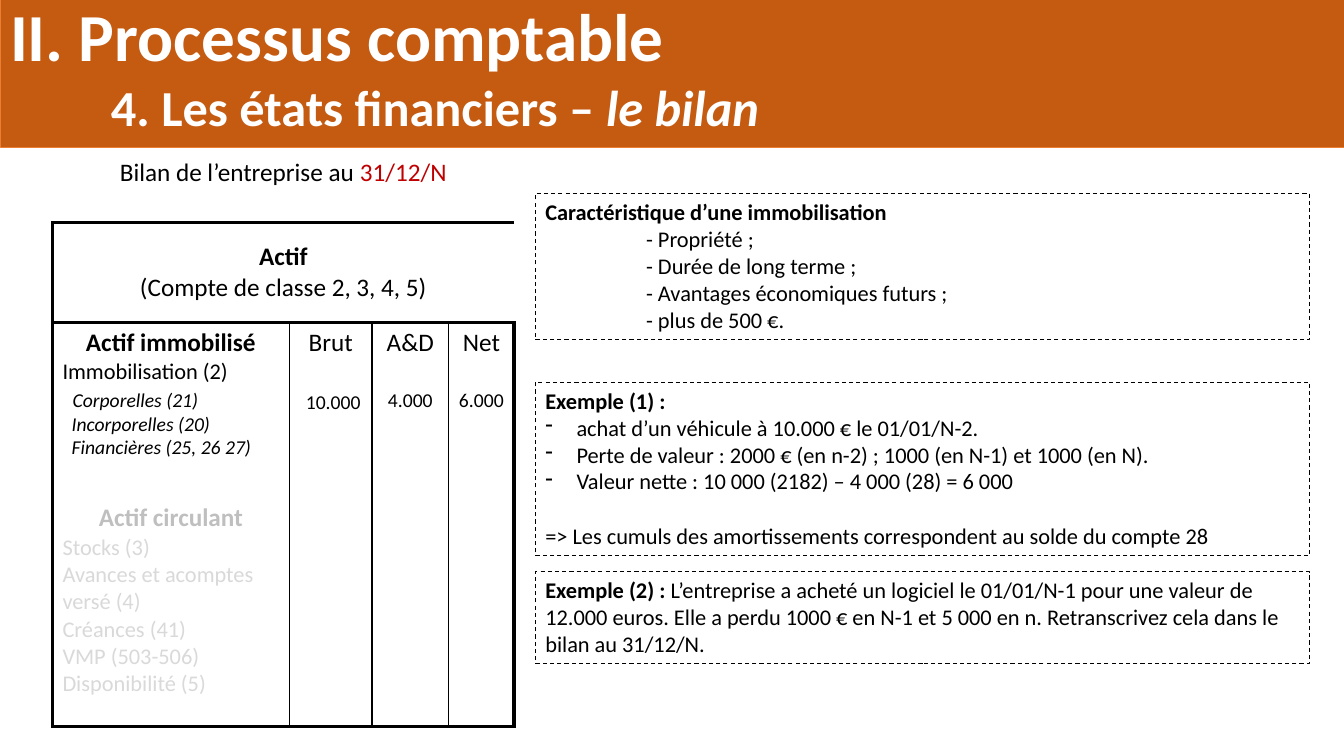
import dataclasses
import typing

import pptx
import pptx.dml.color
import pptx.enum.dml
import pptx.enum.shapes
import pptx.enum.text
import pptx.oxml
import pptx.oxml.ns
import pptx.util

Inches = pptx.util.Inches
Pt = pptx.util.Pt
Color = pptx.dml.color.RGBColor
Align = pptx.enum.text.PP_ALIGN
Anchor = pptx.enum.text.MSO_ANCHOR

BLACK = Color(0x00, 0x00, 0x00)
WHITE = Color(0xFF, 0xFF, 0xFF)
RED = Color(0xC0, 0x00, 0x00)
RUST = Color(0xC5, 0x5A, 0x11)
ORANGE = Color(0xED, 0x7D, 0x31)
GREY = Color(0xBF, 0xBF, 0xBF)
PALE = Color(0xD9, 0xD9, 0xD9)


@dataclasses.dataclass
class Run:
    text: str
    bold: bool = False
    italic: bool = False
    color: typing.Optional[Color] = None
    size: float = 0


@dataclasses.dataclass
class Para:
    runs: typing.List[Run]
    size: float = 16
    color: Color = BLACK
    align: Align = Align.LEFT
    before: float = 0
    left: float = 0
    bullet: str = ""
    spacing: float = 1.0


@dataclasses.dataclass
class Box:
    top: float
    height: float
    paras: typing.List[Para]


def line(text: str, bold: bool = False, italic: bool = False, **style) -> Para:
    return Para([Run(text, bold, italic)], **style)


def mid(text: str, bold: bool = False, size: float = 18, **style) -> Para:
    return line(text, bold, size=size, align=Align.CENTER, **style)


def write(frame, paras: typing.List[Para], anchor: Anchor = Anchor.TOP) -> None:
    frame.word_wrap = True
    frame.vertical_anchor = anchor
    for i, item in enumerate(paras):
        para = frame.paragraphs[0] if i == 0 else frame.add_paragraph()
        para.alignment = item.align
        para.line_spacing = item.spacing
        para.space_before = Pt(item.before)
        para.space_after = Pt(0)
        props = para._p.get_or_add_pPr()
        props.set("marL", str(Inches(item.left)))
        props.set("indent", str(-Inches(item.left) if item.bullet else 0))
        if item.bullet:
            mark = pptx.oxml.parse_xml(
                f'<a:buChar {pptx.oxml.ns.nsdecls("a")} char="{item.bullet}"/>')
            props.append(mark)
        for part in item.runs:
            run = para.add_run()
            run.text = part.text
            font = run.font
            font.name = "Calibri"
            font.size = Pt(part.size or item.size)
            font.bold = part.bold
            font.italic = part.italic
            font.color.rgb = part.color or item.color


def edge(cell, left: float = 0, right: float = 0, top: float = 0, bottom: float = 0) -> None:
    props = cell._tc.get_or_add_tcPr()
    sides = {"lnL": left, "lnR": right, "lnT": top, "lnB": bottom}
    for i, (tag, width) in enumerate(sides.items()):
        fill = f'<a:solidFill><a:srgbClr val="{BLACK}"/></a:solidFill>' if width else "<a:noFill/>"
        border = pptx.oxml.parse_xml(
            f'<a:{tag} {pptx.oxml.ns.nsdecls("a")} w="{Pt(width)}">{fill}</a:{tag}>')
        props.insert(i, border)


def banner(slide) -> None:
    title = slide.shapes.title
    title.left, title.top = Inches(0), Inches(-0.01)
    title.width, title.height = Inches(13.33), Inches(1.47)
    title.fill.solid()
    title.fill.fore_color.rgb = RUST
    title.line.color.rgb = ORANGE
    title.line.width = Pt(0.5)
    title.text_frame.auto_size = pptx.enum.text.MSO_AUTO_SIZE.NONE
    write(title.text_frame, [
        line("II. Processus comptable", True, size=48, color=WHITE, spacing=0.8),
        Para([Run("4. Les états financiers – ", True), Run("le bilan", True, True)],
             size=36, color=WHITE, before=10, left=1, spacing=0.8),
    ], Anchor.MIDDLE)


def sheet(slide) -> None:
    cols = [2.35, 0.82, 0.76, 0.65]
    rows = [0.7, 0.99, 1.74, 2.27]
    frame = slide.shapes.add_table(len(rows), len(cols), Inches(0.52), Inches(1.51),
                                   Inches(sum(cols)), Inches(sum(rows)))
    table = frame.table
    table.first_row = table.horz_banding = False
    for col, width in zip(table.columns, cols):
        col.width = Inches(width)
    for row, height in zip(table.rows, rows):
        row.height = Inches(height)
    last = len(cols) - 1
    for r in range(len(rows)):
        for c in range(len(cols)):
            cell = table.cell(r, c)
            cell.fill.background()
            inner = 1 if r > 1 else 0
            edge(cell,
                 left=0 if r == 0 else 2.25 if c == 0 else inner,
                 right=0 if r == 0 else 3 if c == last else inner,
                 top=2.25 if r in (1, 2) else 0,
                 bottom=0 if r == 2 else 2.25)
    for r in (0, 1):
        table.cell(r, 0).merge(table.cell(r, last))

    texts = {
        (0, 0): [Para([Run("Bilan de l’entreprise au "), Run("31/12/N", color=RED)],
                      size=18, align=Align.CENTER)],
        (1, 0): [mid("Actif", True), mid("(Compte de classe 2, 3, 4, 5)")],
        (2, 0): [mid("Actif immobilisé", True), line("Immobilisation (2)"),
                 line("Corporelles (21)", italic=True, size=14, left=0.1, before=2),
                 line("Incorporelles (20)", italic=True, size=14, left=0.09),
                 line("Financières (25, 26 27)", italic=True, size=14, left=0.09)],
        (2, 1): [mid("Brut"), mid("10.000", size=14, before=23.5, left=0.05)],
        (2, 2): [mid("A&D"), mid("4.000", size=14, before=22)],
        (2, 3): [mid("Net"), mid("6.000", size=14, before=22)],
        (3, 0): [mid("Actif circulant", True, color=GREY)] + [
            line(text, color=PALE) for text in (
                "Stocks (3)", "Avances et acomptes versé (4)", "Créances (41)",
                "VMP (503-506)", "Disponibilité (5)")],
    }
    for (r, c), paras in texts.items():
        write(table.cell(r, c).text_frame, paras)
    table.cell(1, 0).vertical_anchor = Anchor.MIDDLE


def panel(slide, box: Box) -> None:
    shape = slide.shapes.add_shape(pptx.enum.shapes.MSO_SHAPE.RECTANGLE, Inches(5.31),
                                   Inches(box.top), Inches(7.68), Inches(box.height))
    shape.shadow.inherit = False
    shape.fill.solid()
    shape.fill.fore_color.rgb = WHITE
    shape.line.color.rgb = BLACK
    shape.line.width = Pt(0.75)
    shape.line.dash_style = pptx.enum.dml.MSO_LINE.DASH
    write(shape.text_frame, box.paras)


BOXES = [
    Box(1.92, 1.45, [line("Caractéristique d’une immobilisation", True)] + [
        line(text, left=1) for text in (
            "- Propriété ;", "- Durée de long terme ;",
            "- Avantages économiques futurs ;", "- plus de 500 €.")]),
    Box(3.79, 1.72, [line("Exemple (1) :", True)] + [
        line(text, left=0.31, bullet="-") for text in (
            "achat d’un véhicule à 10.000 € le 01/01/N-2.",
            "Perte de valeur : 2000 € (en n-2) ; 1000 (en N-1) et 1000 (en N).",
            "Valeur nette : 10 000 (2182) – 4 000 (28) = 6 000")] + [
        line("=> Les cumuls des amortissements correspondent au solde du compte 28", before=19.5)]),
    Box(5.67, 0.91, [Para([
        Run("Exemple (2) : ", True),
        Run("L’entreprise a acheté un logiciel le 01/01/N-1 pour une valeur de 12.000 euros. "
            "Elle a perdu 1000 € en N-1 et 5 000 en n. Retranscrivez cela dans le bilan "
            "au 31/12/N.")])]),
]


def main() -> None:
    deck = pptx.Presentation()
    deck.slide_width, deck.slide_height = Inches(13.33), Inches(7.5)
    slide = deck.slides.add_slide(deck.slide_layouts[5])
    banner(slide)
    sheet(slide)
    for box in BOXES:
        panel(slide, box)
    deck.save("out.pptx")


if __name__ == "__main__":
    main()
